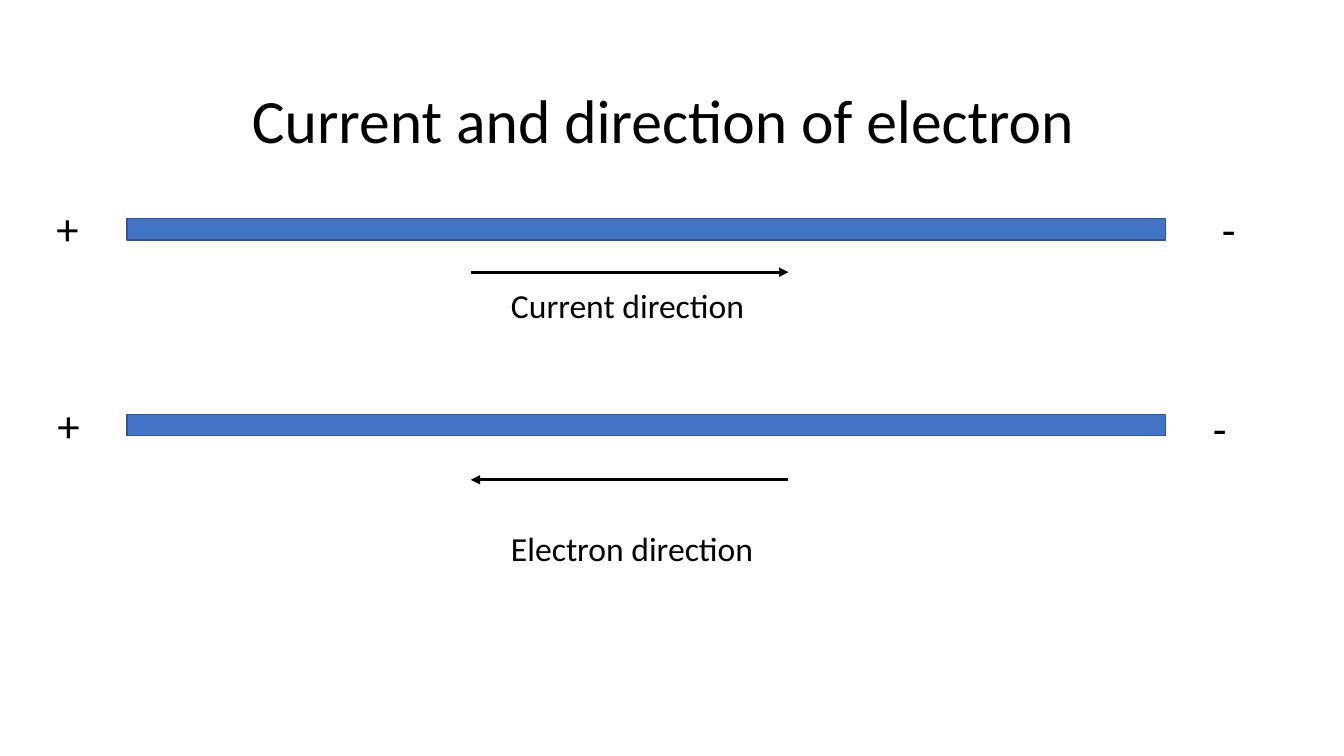
"""Build a slide contrasting current direction with electron direction."""
from dataclasses import dataclass

from pptx import Presentation
from pptx.dml.color import RGBColor
from pptx.enum.shapes import MSO_CONNECTOR, MSO_SHAPE
from pptx.enum.text import MSO_ANCHOR, MSO_AUTO_SIZE, PP_ALIGN
from pptx.oxml.ns import qn
from pptx.util import Inches, Pt
from lxml.etree import SubElement

TITLE = "Current and direction of electron"
WIRES = [
    dict(label="Current direction", top=2.17, arrow=0.53, forward=True,
         label_top=2.78, label_width=2.54,
         poles=[("+", 0.46, 1.94), ("-", 12.02, 1.95)]),
    dict(label="Electron direction", top=4.11, arrow=0.65, forward=False,
         label_top=5.19, label_width=2.63,
         poles=[("+", 0.47, 3.9), ("-", 11.93, 3.93)]),
]
WIDTH, HEIGHT = 13.33, 7.5
WIRE_LEFT, WIRE_WIDTH, WIRE_HEIGHT = 1.26, 10.3, 0.21
ARROW_ENDS = (4.67, 7.82)
LABEL_LEFT = 4.97
POLE_SIZE = (0.39, 0.64)


@dataclass(frozen=True)
class Theme:
    font: str = "Calibri"
    ink: RGBColor = RGBColor.from_string("000000")
    wire: RGBColor = RGBColor.from_string("4472C4")
    edge: RGBColor = RGBColor.from_string("325491")
    title: int = 44
    pole: int = 32
    label: int = 24


THEME = Theme()


def add_text(s, text, box, *, size, align=PP_ALIGN.LEFT, anchor=MSO_ANCHOR.TOP,
             wrap=True, grow=True, spacing=None):
    tf = s.shapes.add_textbox(*map(Inches, box)).text_frame
    tf.word_wrap = wrap
    tf.auto_size = MSO_AUTO_SIZE.SHAPE_TO_FIT_TEXT if grow else MSO_AUTO_SIZE.NONE
    tf.vertical_anchor = anchor
    p = tf.paragraphs[0]
    p.alignment = align
    p.line_spacing = spacing
    r = p.add_run()
    r.text = text
    r.font.name, r.font.size = THEME.font, Pt(size)
    r.font.color.rgb = THEME.ink


def add_wire(s, top):
    sp = s.shapes.add_shape(MSO_SHAPE.RECTANGLE, *map(
        Inches, (WIRE_LEFT, top, WIRE_WIDTH, WIRE_HEIGHT)))
    sp.shadow.inherit = False
    sp.fill.solid()
    sp.fill.fore_color.rgb = THEME.wire
    sp.line.color.rgb = THEME.edge
    sp.line.width = Pt(1)


def add_arrow(s, start, end, y):
    sp = s.shapes.add_connector(
        MSO_CONNECTOR.STRAIGHT, *map(Inches, (start, y, end, y)))
    sp.line.color.rgb = THEME.ink
    sp.line.width = Pt(2.25)
    SubElement(sp.line._get_or_add_ln(), qn("a:tailEnd"), type="triangle")
    SubElement(sp._element.spPr, qn("a:effectLst"))


def main():
    prs = Presentation()
    prs.slide_width, prs.slide_height = Inches(WIDTH), Inches(HEIGHT)
    s = prs.slides.add_slide(prs.slide_layouts[6])
    add_text(s, TITLE, (0.83, 0.5, 11.5, 1.45), size=THEME.title,
             align=PP_ALIGN.CENTER, anchor=MSO_ANCHOR.MIDDLE, grow=False,
             spacing=0.9)
    for wire in WIRES:
        add_wire(s, wire["top"])
        start, end = ARROW_ENDS if wire["forward"] else ARROW_ENDS[::-1]
        add_arrow(s, start, end, wire["top"] + wire["arrow"])
        for sign, left, top in wire["poles"]:
            add_text(s, sign, (left, top, *POLE_SIZE), size=THEME.pole)
        add_text(s, wire["label"],
                 (LABEL_LEFT, wire["label_top"], wire["label_width"], 0.5),
                 size=THEME.label, wrap=False)
    prs.save("out.pptx")


if __name__ == "__main__":
    main()
